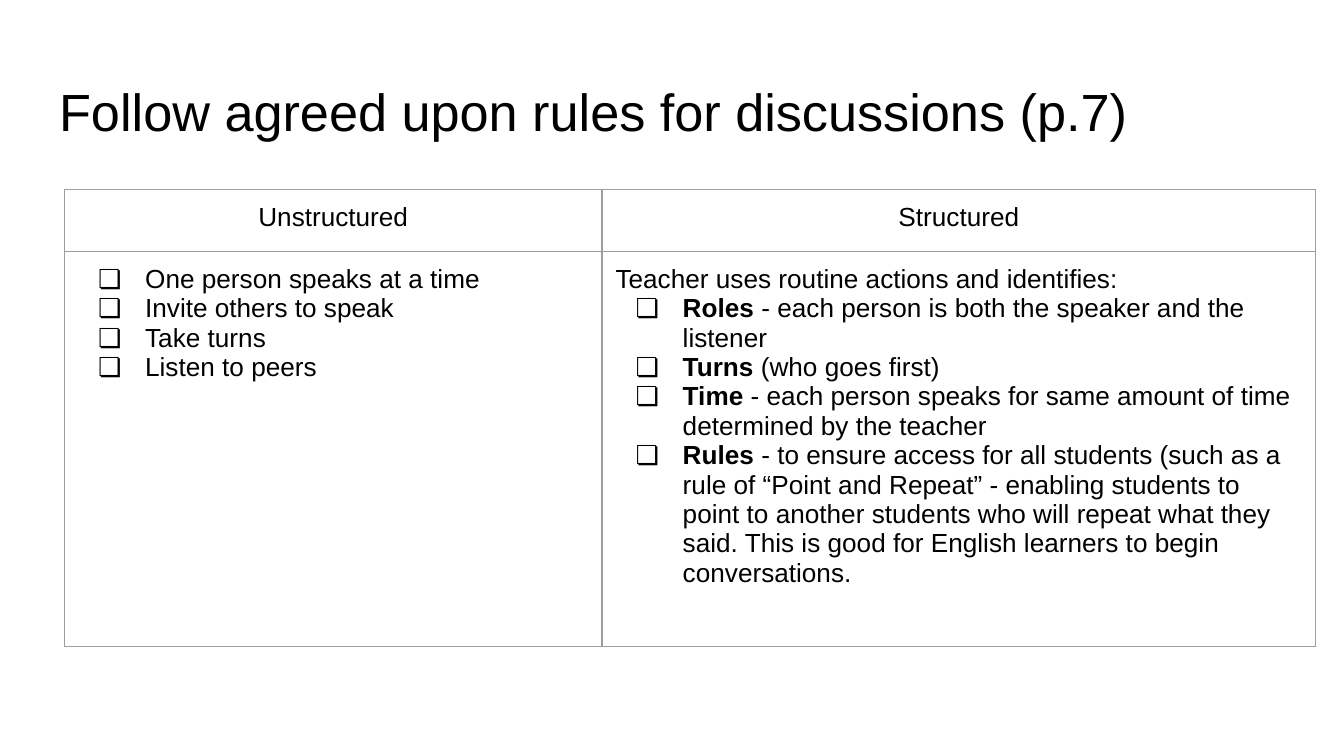
from lxml.etree import SubElement
from pptx import Presentation
from pptx.dml.color import RGBColor
from pptx.enum.text import MSO_ANCHOR as Anchor, MSO_AUTO_SIZE as AutoSize, PP_ALIGN as Align
from pptx.oxml.ns import qn
from pptx.util import Inches, Pt

WIDTH = 10
HEIGHT = WIDTH * 9 / 16
FONT = "Arial"
INK, RULE = "000000", "9E9E9E"
INSET = 0.1
COLUMNS, ROWS = (4, 5.31), (0.46, 2.94)
HEADINGS = ("Unstructured", "Structured")
UNSTRUCTURED = (
    "One person speaks at a time",
    "Invite others to speak",
    "Take turns",
    "Listen to peers",
)
STRUCTURED_INTRO = "Teacher uses routine actions and identifies:"
STRUCTURED = (
    ("Roles", " - each person is both the speaker and the listener"),
    ("Turns", " (who goes first)"),
    ("Time", " - each person speaks for same amount of time determined by the teacher"),
    ("Rules ", "- to ensure access for all students (such as a rule of “Point and Repeat” - "
               "enabling students to point to another students who will repeat what they said. "
               "This is good for English learners to begin conversations."),
)


def color(code):
    """Turn a hex string into a colour."""
    return RGBColor.from_string(code)


def write(paragraph, text, size=14, bold=False, ink=INK, align=Align.LEFT):
    """Add one formatted run to a paragraph."""
    paragraph.alignment = align
    run = paragraph.add_run()
    run.text = text
    run.font.name, run.font.size, run.font.bold = FONT, Pt(size), bold
    run.font.color.rgb = color(ink)


def add_bullet(paragraph, mark="❏", left=0.5, hanging=0.35):
    """Give a paragraph a checkbox bullet with a hanging indent."""
    properties = paragraph._p.get_or_add_pPr()
    properties.set("marL", str(Inches(left)))
    properties.set("indent", str(-Inches(hanging)))
    bullet_ink = SubElement(properties, qn("a:buClr"))
    SubElement(bullet_ink, qn("a:srgbClr"), val=INK)
    SubElement(properties, qn("a:buFont"), typeface=FONT)
    SubElement(properties, qn("a:buChar"), char=mark)


def set_insets(box):
    """Apply the same inner margin to all sides of a cell or text frame."""
    for side in ("left", "top", "right", "bottom"):
        setattr(box, f"margin_{side}", Inches(INSET))


def style_cell(cell):
    """Clear a cell's fill and draw thin rules around it."""
    set_insets(cell)
    cell.vertical_anchor = Anchor.TOP
    properties = cell._tc.get_or_add_tcPr()
    for edge in ("lnL", "lnR", "lnT", "lnB"):
        border = SubElement(properties, qn(f"a:{edge}"), w=str(Pt(0.75)))
        fill = SubElement(border, qn("a:solidFill"))
        SubElement(fill, qn("a:srgbClr"), val=RULE)
    cell.fill.background()


def add_title(slide, text):
    """Place the slide title in its placeholder."""
    title = slide.shapes.title
    title.left, title.top = Inches(0.34), Inches(0.49)
    title.width, title.height = Inches(9.32), Inches(0.63)
    frame = title.text_frame
    set_insets(frame)
    frame.word_wrap = True
    frame.auto_size = AutoSize.NONE
    frame.vertical_anchor = Anchor.TOP
    write(frame.paragraphs[0], text, size=28)


def add_comparison(slide):
    """Add the two-column table grid and return it."""
    table = slide.shapes.add_table(
        len(ROWS), len(COLUMNS), Inches(0.48), Inches(1.41),
        Inches(sum(COLUMNS)), Inches(sum(ROWS))).table
    table.first_row = table.horz_banding = False
    for column, width in zip(table.columns, COLUMNS):
        column.width = Inches(width)
    for row, height in zip(table.rows, ROWS):
        row.height = Inches(height)
    for cell in table.iter_cells():
        style_cell(cell)
    return table


def fill_list(cell, items, intro=None):
    """Write bulleted (bold term, explanation) items below an optional intro."""
    frame = cell.text_frame
    paragraph = frame.paragraphs[0]
    if intro:
        write(paragraph, intro)
        paragraph = frame.add_paragraph()
    for index, (term, explanation) in enumerate(items):
        if index:
            paragraph = frame.add_paragraph()
        add_bullet(paragraph)
        if term:
            write(paragraph, term, bold=True)
        write(paragraph, explanation)


def main():
    """Build and save the discussion rules slide."""
    deck = Presentation()
    deck.slide_width, deck.slide_height = Inches(WIDTH), Inches(HEIGHT)
    slide = deck.slides.add_slide(deck.slide_layouts.get_by_name("Title Only"))
    add_title(slide, "Follow agreed upon rules for discussions (p.7)")
    comparison = add_comparison(slide)
    for column, heading in enumerate(HEADINGS):
        write(comparison.cell(0, column).text_frame.paragraphs[0], heading, align=Align.CENTER)
    fill_list(comparison.cell(1, 0), [("", rule) for rule in UNSTRUCTURED])
    fill_list(comparison.cell(1, 1), STRUCTURED, intro=STRUCTURED_INTRO)
    deck.save("out.pptx")


if __name__ == "__main__":
    main()
